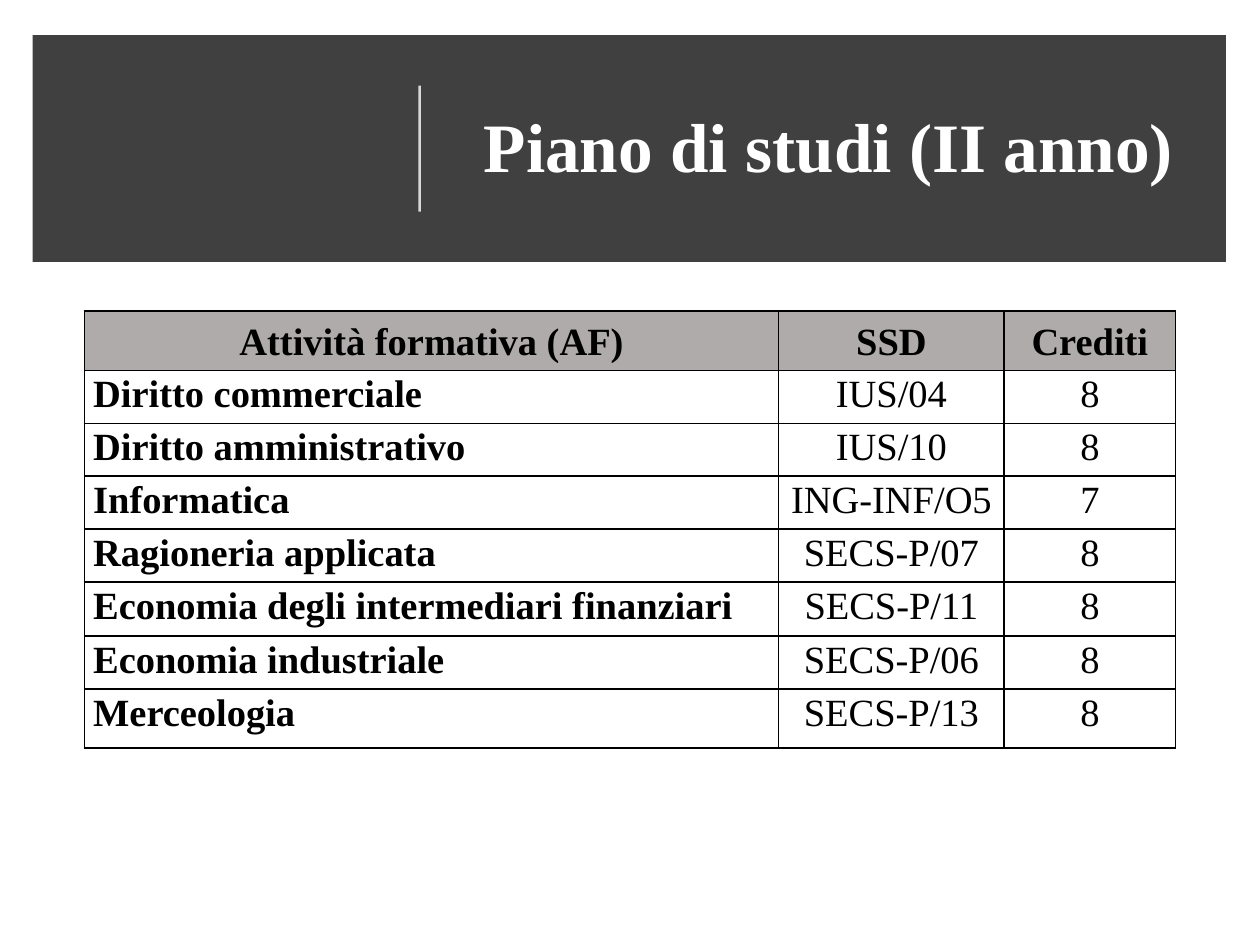
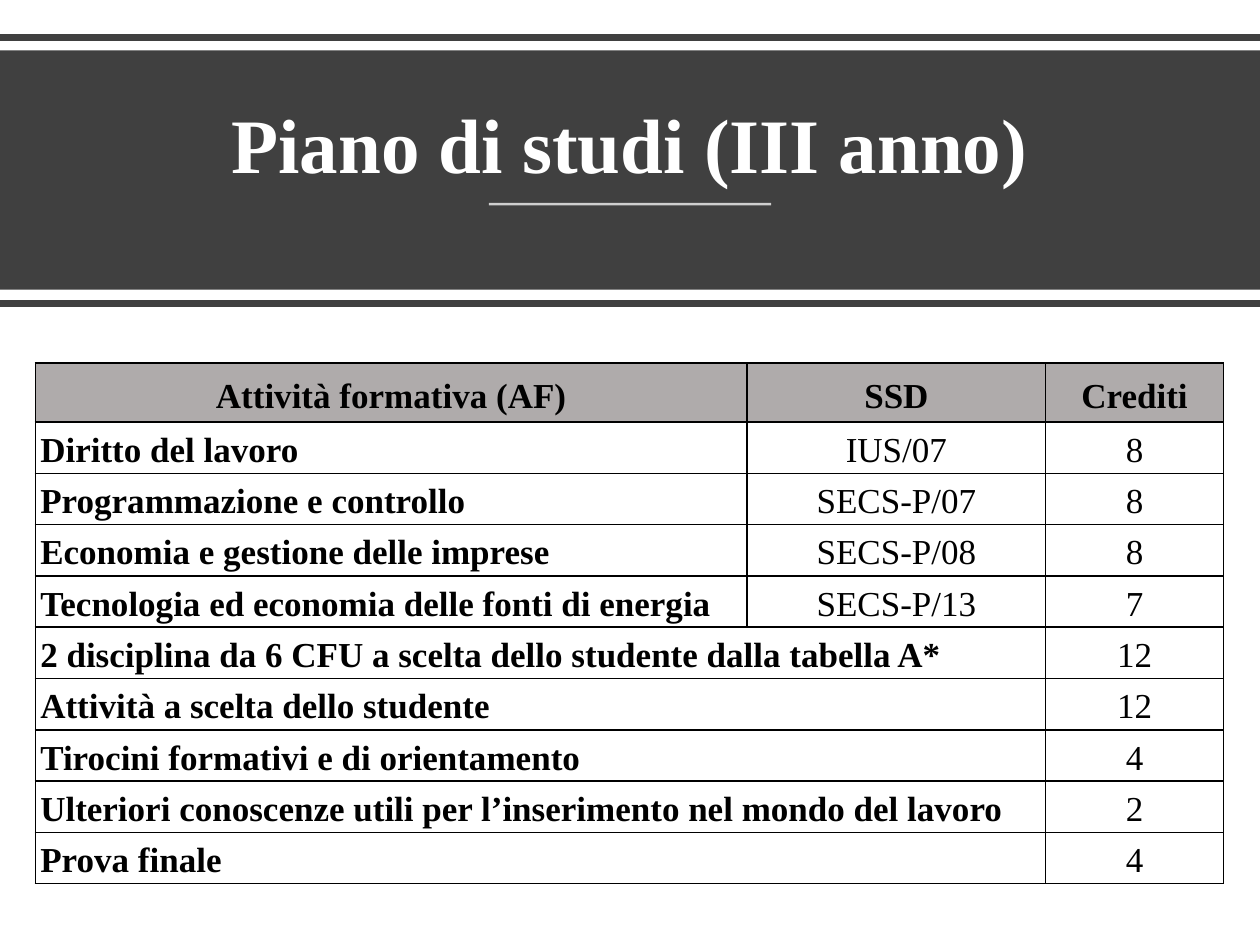
from lxml import etree
from pptx import Presentation
from pptx import util as u
from pptx.dml.color import RGBColor
from pptx.enum import shapes, text
from pptx.oxml import ns

FONT = "Times New Roman"
COLORS = {
    "band": "404040",
    "title": "FFFFFF",
    "header": "AFABAB",
    "ink": "000000",
}
HEADINGS = ("Attività formativa (AF)", "SSD", "Crediti")

SECOND_YEAR = [
    ("Diritto commerciale", "IUS/04", "8"),
    ("Diritto amministrativo", "IUS/10", "8"),
    ("Informatica", "ING-INF/O5", "7"),
    ("Ragioneria applicata", "SECS-P/07", "8"),
    ("Economia degli intermediari finanziari", "SECS-P/11", "8"),
    ("Economia industriale", "SECS-P/06", "8"),
    ("Merceologia", "SECS-P/13", "8"),
]
# An activity without SSD spans the first two columns
THIRD_YEAR = [
    ("Diritto del lavoro", "IUS/07", "8"),
    ("Programmazione e controllo", "SECS-P/07", "8"),
    ("Economia e gestione delle imprese", "SECS-P/08", "8"),
    ("Tecnologia ed economia delle fonti di energia", "SECS-P/13", "7"),
    ("2 disciplina da 6 CFU a scelta dello studente dalla tabella A*", None, "12"),
    ("Attività a scelta dello studente", None, "12"),
    ("Tirocini formativi e di orientamento", None, "4"),
    ("Ulteriori conoscenze utili per l’inserimento nel mondo del lavoro", None, "2"),
    ("Prova finale", None, "4"),
]


def color(name):
    return RGBColor.from_string(COLORS[name])


def inches(*values):
    return [u.Inches(value) for value in values]


def add_text(frame, words, size, ink, bold, align, spacing):
    para = frame.paragraphs[0]
    para.alignment = align
    para.line_spacing = spacing
    span = para.add_run()
    span.text = words
    span.font.name = FONT
    span.font.size = u.Pt(size)
    span.font.bold = bold
    span.font.color.rgb = color(ink)
    return para


def add_band(page, *place):
    band = page.shapes.add_shape(shapes.MSO_SHAPE.RECTANGLE, *inches(*place))
    band.shadow.inherit = False
    band.fill.solid()
    band.fill.fore_color.rgb = color("band")
    band.line.fill.background()


def add_title(page, words, place, size, anchor):
    box = page.shapes.add_textbox(*inches(*place))
    frame = box.text_frame
    frame.word_wrap = True
    frame.vertical_anchor = anchor
    add_text(frame, words, size, "title", True, text.PP_ALIGN.CENTER, 0.9)


def add_rule(page, ends, ink, width, opacity=100):
    rule = page.shapes.add_connector(shapes.MSO_CONNECTOR.STRAIGHT, *inches(*ends))
    rule.line.color.rgb = color(ink)
    rule.line.width = u.Pt(width)
    properties = rule._element.spPr
    if opacity < 100:
        tint = properties.find(".//" + ns.qn("a:srgbClr"))
        etree.SubElement(tint, ns.qn("a:alpha"), val=str(opacity * 1000))
    etree.SubElement(properties, ns.qn("a:effectLst"))


def add_borders(cell):
    properties = cell._tc.get_or_add_tcPr()
    for side in ("lnL", "lnR", "lnT", "lnB"):
        border = etree.SubElement(properties, ns.qn("a:" + side), w=str(u.Pt(1)))
        fill = etree.SubElement(border, ns.qn("a:solidFill"))
        etree.SubElement(fill, ns.qn("a:srgbClr"), val=COLORS["ink"])


def style_cell(cell, is_header, side_margin, top_margin):
    add_borders(cell)
    cell.margin_left = cell.margin_right = u.Inches(side_margin)
    cell.margin_top = u.Inches(top_margin)
    cell.margin_bottom = 0
    if is_header:
        cell.vertical_anchor = text.MSO_ANCHOR.MIDDLE
        cell.fill.solid()
        cell.fill.fore_color.rgb = color("header")
    else:
        cell.vertical_anchor = text.MSO_ANCHOR.TOP
        cell.fill.background()


def add_plan(page, courses, left, top, widths, heights, size, margins):
    records = [HEADINGS, *courses]
    place = inches(left, top, sum(widths), sum(heights))
    table = page.shapes.add_table(len(records), len(widths), *place).table
    table.first_row = table.horz_banding = False
    for column, width in zip(table.columns, widths):
        column.width = u.Inches(width)
    for r, (record, height) in enumerate(zip(records, heights)):
        table.rows[r].height = u.Inches(height)
        is_header = r == 0
        for c, words in enumerate(record):
            cell = table.cell(r, c)
            style_cell(cell, is_header, *margins)
            if words is None:
                table.cell(r, c - 1).merge(cell)
                continue
            is_name = c == 0 and not is_header
            align = text.PP_ALIGN.LEFT if is_name else text.PP_ALIGN.CENTER
            para = add_text(cell.text_frame, words, size, "ink",
                            is_header or is_name, align, 1.07)
            para.space_after = u.Pt(8)


def build_second_year(page):
    add_band(page, 0.26, 0.28, 9.47, 1.8)
    add_title(page, "Piano di studi (II anno)", (3.59, 0.5, 5.97, 1.38),
              39.6, text.MSO_ANCHOR.MIDDLE)
    add_rule(page, (3.33, 1.68, 3.33, 0.68), "title", 1.5, 80)
    add_plan(page, SECOND_YEAR, 0.67, 2.47, (5.51, 1.79, 1.36),
             [0.47] + [0.42] * 4 + [0.43, 0.42, 0.47], 22, (0.07, 0))


def build_third_year(page):
    add_rule(page, (0, 0.3, 10, 0.3), "band", 4)
    add_band(page, 0, 0.4, 10, 1.9)
    add_title(page, "Piano di studi (III anno)", (0.43, 0.54, 9.14, 1.02),
              44, text.MSO_ANCHOR.BOTTOM)
    add_rule(page, (3.88, 1.62, 6.12, 1.62), "title", 1.5, 75)
    add_rule(page, (0, 2.41, 10, 2.41), "band", 4)
    add_plan(page, THIRD_YEAR, 0.28, 2.88, (5.65, 2.37, 1.41),
             [0.47] + [0.36] * len(THIRD_YEAR), 20, (0.04, 0.05))


def main():
    deck = Presentation()
    deck.slide_width, deck.slide_height = inches(10, 7.5)
    blank = deck.slide_layouts[6]
    for build in (build_second_year, build_third_year):
        build(deck.slides.add_slide(blank))
    deck.save("out.pptx")


if __name__ == "__main__":
    main()
